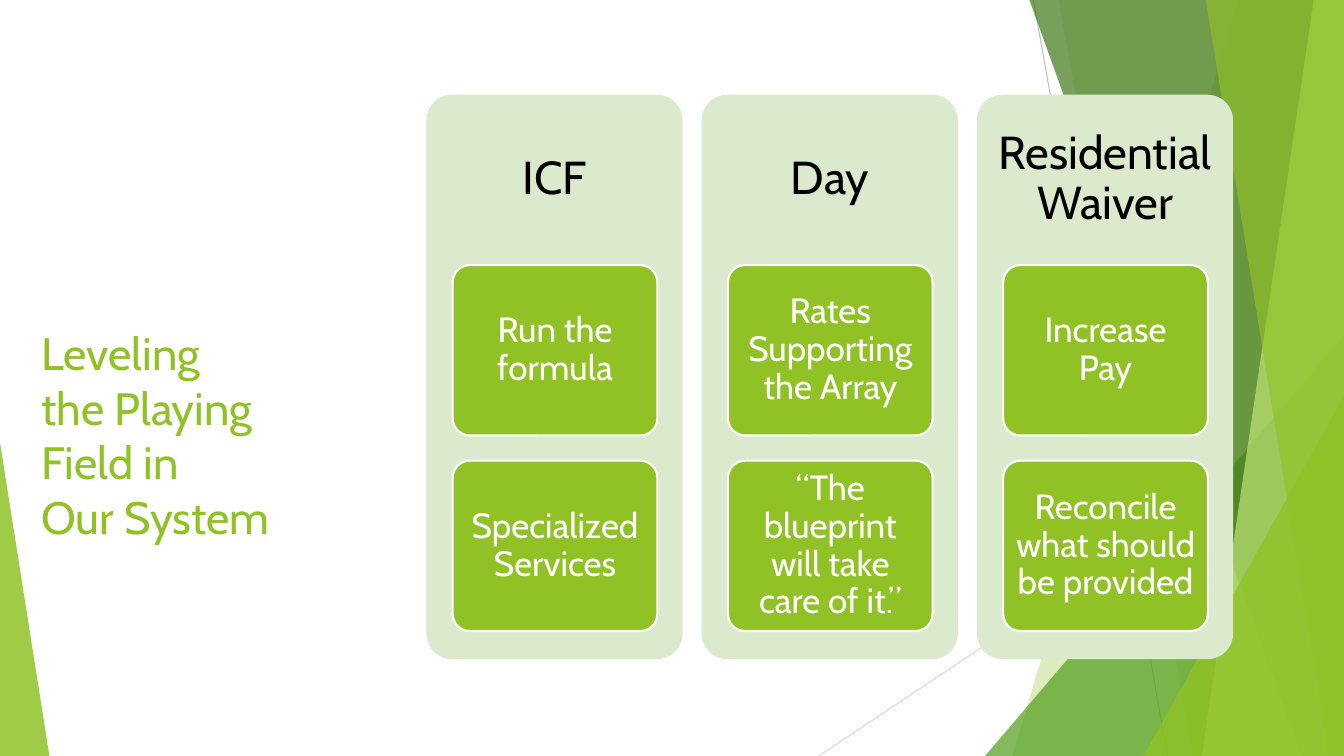
from pptx import Presentation
from pptx.dml.color import RGBColor
from pptx.enum.shapes import MSO_CONNECTOR, MSO_SHAPE
from pptx.enum.text import MSO_ANCHOR, MSO_AUTO_SIZE, PP_ALIGN
from pptx.oxml.ns import qn
from pptx.util import Pt
from lxml.etree import SubElement

PX = 9144
WIDE, HIGH = 1333, 750
FONT = "Cabin"
WHITE = RGBColor(0xFF, 0xFF, 0xFF)
BLACK = RGBColor(0x00, 0x00, 0x00)
LIME = RGBColor(0x90, 0xC2, 0x26)
GREEN = RGBColor(0x54, 0xA0, 0x21)
DARK = RGBColor(0x3F, 0x78, 0x19)
LIGHT = RGBColor(0xC0, 0xE4, 0x74)
PALE = RGBColor(0xDB, 0xE9, 0xCD)
GREY = RGBColor(0xBF, 0xBF, 0xBF)
MIST = RGBColor(0xD9, 0xD9, 0xD9)

TITLE = ["Leveling", "the Playing", "Field in", "Our System"]
CARDS = [
    ("ICF", ["Run the formula", "Specialized Services"]),
    ("Day", ["Rates Supporting the Array", "“The blueprint will take care of it.”"]),
    ("Residential Waiver", ["Increase Pay", "Reconcile what should be provided"]),
]


def scale(*nums):
    """Turn px lengths into EMU."""
    return [num * PX for num in nums]


def paint(shape, color, alpha=100):
    """Fill a shape flat, with no line or shadow."""
    shape.shadow.inherit = False
    shape.line.fill.background()
    shape.fill.solid()
    shape.fill.fore_color.rgb = color
    if alpha < 100:
        tint = shape.fill._xPr.find(qn("a:solidFill"))[0]
        SubElement(tint, qn("a:alpha"), val=str(alpha * 1000))


def add_line(slide, start, end, color):
    """Draw a thin straight line."""
    line = slide.shapes.add_connector(MSO_CONNECTOR.STRAIGHT, *scale(*start, *end))
    line.line.color.rgb = color
    line.line.width = Pt(0.75)
    SubElement(line._element.spPr, qn("a:effectLst"))


def add_facet(slide, top, base, color, alpha):
    """Draw a full-height band from its slanted left side to the right edge."""
    pen = slide.shapes.build_freeform(top, 0, scale=PX)
    pen.add_line_segments([(WIDE, 0), (WIDE, HIGH), (base, HIGH)], close=True)
    paint(pen.convert_to_shape(), color, alpha)


def add_wedge(slide, box, tip, color, alpha):
    """Draw a triangle whose tip sits at the given share of its width."""
    wedge = slide.shapes.add_shape(MSO_SHAPE.ISOSCELES_TRIANGLE, *scale(*box))
    wedge.adjustments[0] = tip
    paint(wedge, color, alpha)


def add_panel(slide, box, color):
    """Draw a rounded rectangle."""
    panel = slide.shapes.add_shape(MSO_SHAPE.ROUNDED_RECTANGLE, *scale(*box))
    panel.adjustments[0] = 0.1
    paint(panel, color)
    return panel


def style(run, size, color):
    """Set the font of a run."""
    run.font.name = FONT
    run.font.size = Pt(size)
    run.font.color.rgb = color


def write(shape, text, size, color, side, edge):
    """Write centred text inside a shape."""
    frame = shape.text_frame
    frame.word_wrap = True
    frame.vertical_anchor = MSO_ANCHOR.MIDDLE
    frame.margin_left = frame.margin_right = side * PX
    frame.margin_top = frame.margin_bottom = edge * PX
    para = frame.paragraphs[0]
    para.alignment = PP_ALIGN.CENTER
    para.line_spacing = 0.9
    run = para.add_run()
    run.text = text
    style(run, size, color)


def add_title(slide):
    """Place the title with its line breaks."""
    title = slide.shapes.title
    title.left, title.top, title.width, title.height = scale(31, 318, 1100, 159)
    frame = title.text_frame
    frame.auto_size = MSO_AUTO_SIZE.NONE
    frame.vertical_anchor = MSO_ANCHOR.TOP
    para = frame.paragraphs[0]
    para.alignment = PP_ALIGN.LEFT
    for row, text in enumerate(TITLE):
        if row:
            para.add_line_break()
        run = para.add_run()
        run.text = text
        style(run, 32.4, LIME)


def add_card(slide, left, head, items):
    """Draw one column with its heading and item boxes."""
    add_panel(slide, (left, 94, 254, 560), PALE)
    label = slide.shapes.add_textbox(*scale(left, 94, 254, 168))
    write(label, head, 33, BLACK, 14, 14)
    for row, text in enumerate(items):
        item = add_panel(slide, (left + 26, 263 + 194 * row, 203, 169), LIME)
        item.line.color.rgb = WHITE
        item.line.width = Pt(1.5)
        write(item, text, 25, WHITE, 7, 5)


def add_decor(slide):
    """Draw the lines and facets along the slide edges."""
    add_line(slide, (1025, 0), (1158, HIGH), GREY)
    add_line(slide, (WIDE, 403), (812, HIGH), MIST)
    add_facet(slide, 1228, 1004, LIME, 30)
    add_facet(slide, 1050, 1183, LIME, 20)
    add_wedge(slide, (977, 333, 356, 417), 1, GREEN, 72)
    add_facet(slide, 1021, 1291, DARK, 70)
    add_facet(slide, 1303, 1192, LIGHT, 70)
    add_facet(slide, 1196, 1318, LIME, 65)
    add_wedge(slide, (1134, 393, 199, 357), 1, LIME, 80)
    add_wedge(slide, (0, 439, 49, 311), 0, LIME, 85)


def main():
    """Build and save the slide."""
    deck = Presentation()
    deck.slide_width, deck.slide_height = scale(WIDE, HIGH)
    slide = deck.slides.add_slide(deck.slide_layouts[5])
    add_decor(slide)
    add_title(slide)
    for col, (head, items) in enumerate(CARDS):
        add_card(slide, 423 + 273 * col, head, items)
    deck.save("out.pptx")


if __name__ == "__main__":
    main()
